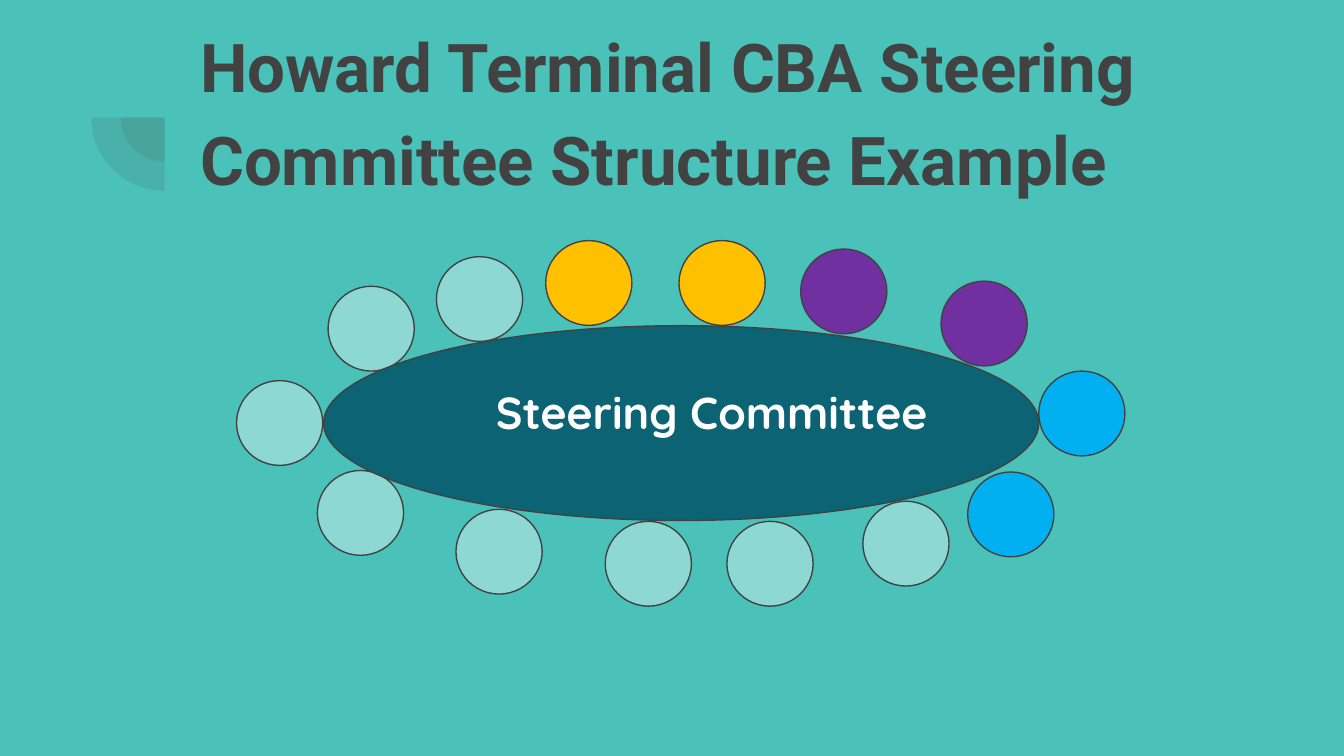
import pptx
import pptx.dml.color
import pptx.enum.shapes
import pptx.enum.text
import pptx.util
from lxml import etree

SHAPES = pptx.enum.shapes.MSO_SHAPE
SLIDE_WIDTH = pptx.util.Inches(10)
SLIDE_HEIGHT = SLIDE_WIDTH * 9 // 16
COLORS = {
    "background": "4AC1B9",
    "dark": "424242",
    "table": "0B6374",
    "mint": "8DD8D3",
    "yellow": "FFC000",
    "purple": "7030A0",
    "blue": "00B0F0",
    "white": "FFFFFF",
}
SEAT_SIZE = (9.7, 23.2)
FRONT_SEATS = [
    (10.3, 12.5, "mint"),
    (0, 38.3, "mint"),
    (9.1, 62.9, "mint"),
    (24.7, 73.5, "mint"),
    (41.5, 76.8, "mint"),
    (55.2, 76.8, "mint"),
    (70.5, 71.3, "mint"),
    (82.3, 63.3, "blue"),
]
BACK_SEATS = [
    (22.5, 4.4, "mint"),
    (34.8, 0, "yellow"),
    (49.8, 0, "yellow"),
    (63.5, 2.3, "purple"),
    (79.3, 11.1, "purple"),
    (90.3, 35.7, "blue"),
]


def color(name):
    """Return the named colour."""
    return pptx.dml.color.RGBColor.from_string(COLORS[name])


def place(box, left, top, width, height):
    """Turn percentages of a box into lengths."""
    box_left, box_top, box_width, box_height = box
    inches = (
        box_left + box_width * left / 100,
        box_top + box_height * top / 100,
        box_width * width / 100,
        box_height * height / 100,
    )
    return [pptx.util.Inches(length) for length in inches]


def add_filled(slide, kind, position, fill, outlined=True):
    """Add a flat preset shape with an optional thin outline."""
    shape = slide.shapes.add_shape(kind, *position)
    shape.shadow.inherit = False
    shape.fill.solid()
    shape.fill.fore_color.rgb = color(fill)
    if outlined:
        shape.line.color.rgb = color("dark")
        shape.line.width = pptx.util.Pt(0.75)
    else:
        shape.line.fill.background()
    return shape


def add_text(slide, position, text, font, size, fill, spacing=1):
    """Add a wrapped bold text box."""
    text_frame = slide.shapes.add_textbox(*position).text_frame
    text_frame.word_wrap = True
    text_frame.vertical_anchor = pptx.enum.text.MSO_ANCHOR.TOP
    for side in ("left", "top", "right", "bottom"):
        setattr(text_frame, f"margin_{side}", pptx.util.Inches(0.1))
    text_frame.text = text
    paragraph = text_frame.paragraphs[0]
    paragraph.line_spacing = spacing
    run_font = paragraph.runs[0].font
    run_font.name = font
    run_font.size = pptx.util.Pt(size)
    run_font.bold = True
    run_font.color.rgb = color(fill)


def add_corner(slide, box):
    """Draw two translucent concentric quarter circles."""
    for share in (60, 100):
        margin = (100 - share) / 2
        pie = add_filled(slide, SHAPES.PIE, place(box, margin, margin, share, share), "dark", False)
        pie.adjustments[0] = 108
        pie.adjustments[1] = 162
        pie.rotation = 270
        tint = pie.fill._xPr.find(".//" + pptx.oxml.ns.qn("a:srgbClr"))
        etree.SubElement(tint, pptx.oxml.ns.qn("a:alpha"), val="12000")


def add_title(slide, box):
    """Write the slide title."""
    add_text(slide, place(box, 0, 0, 100, 100),
             "Howard Terminal CBA Steering Committee Structure Example",
             "Roboto", 36, "dark", 1.15)


def add_seats(slide, box, seats):
    """Place the coloured seats around the table."""
    for left, top, fill in seats:
        add_filled(slide, SHAPES.FLOWCHART_CONNECTOR, place(box, left, top, *SEAT_SIZE), fill)


def add_committee(slide, box):
    """Draw the oval table, its label and its seats."""
    add_seats(slide, box, FRONT_SEATS)
    add_filled(slide, SHAPES.OVAL, place(box, 9.8, 23.3, 80.5, 53.3), "table")
    add_text(slide, place(box, 27.7, 35.7, 54.5, 25.7), "Steering Committee", "Quicksand", 24, "white")
    add_seats(slide, box, BACK_SEATS)


def main():
    """Build and save the presentation."""
    presentation = pptx.Presentation()
    presentation.slide_width = SLIDE_WIDTH
    presentation.slide_height = SLIDE_HEIGHT
    slide = presentation.slides.add_slide(presentation.slide_layouts[6])
    slide.background.fill.solid()
    slide.background.fill.fore_color.rgb = color("background")
    add_corner(slide, (0.68, 0.33, 1.09, 1.09))
    add_title(slide, (1.39, 0, 7.69, 1.09))
    add_committee(slide, (1.76, 1.79, 6.61, 2.72))
    presentation.save("out.pptx")


if __name__ == "__main__":
    main()
